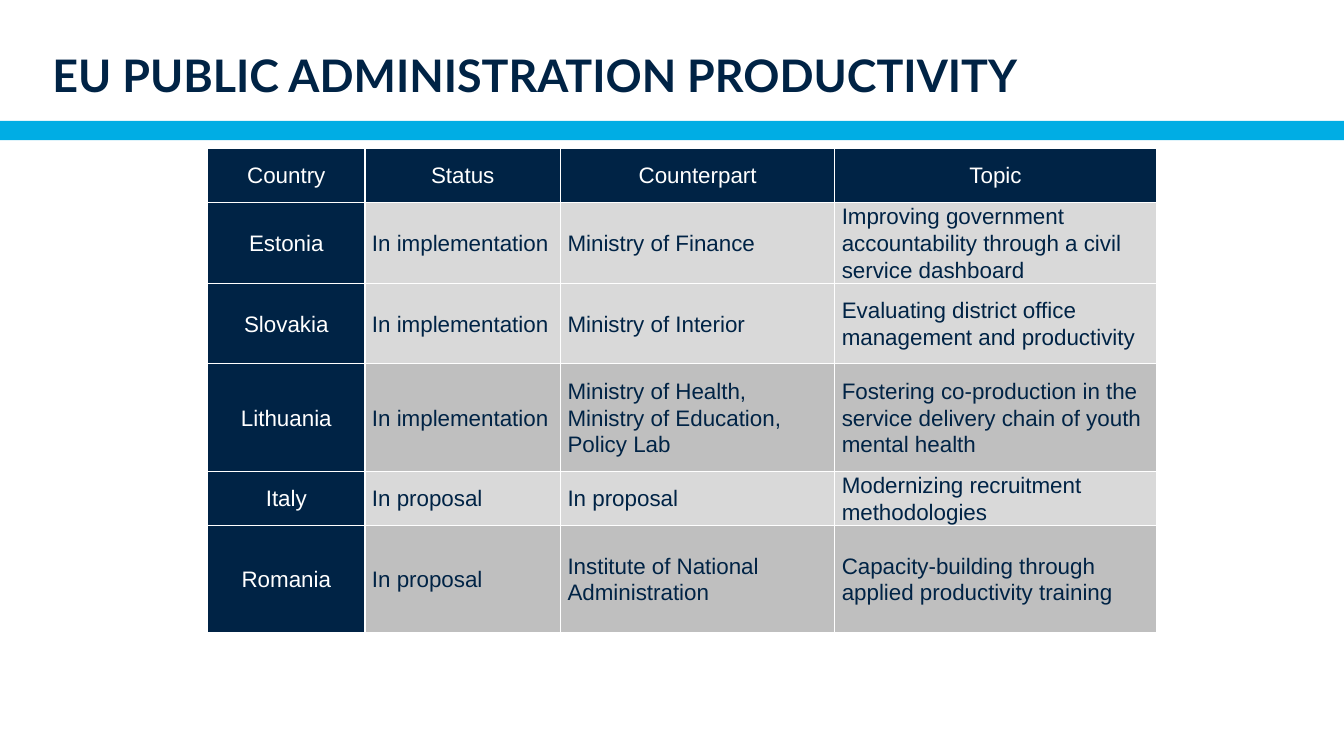
import pptx
import pptx.util
import pptx.dml.color
import pptx.enum.shapes
import pptx.enum.text
import pptx.oxml
import pptx.oxml.ns

Inches = pptx.util.Inches
Pt = pptx.util.Pt
ALIGN = pptx.enum.text.PP_ALIGN
MIDDLE = pptx.enum.text.MSO_ANCHOR.MIDDLE

COLORS = {
    "navy": "002345",
    "cyan": "00ADE4",
    "white": "FFFFFF",
    "light": "D9D9D9",
    "mid": "BFBFBF",
}
COL_WIDTHS = [1.56, 1.94, 2.72, 3.19]
ROW_HEIGHTS = [0.54, 0.8, 0.8, 1.07, 0.53, 1.07]
ROW_FILLS = ["navy", "light", "light", "mid", "light", "mid"]
ROWS = [
    ["Country", "Status", "Counterpart", "Topic"],
    ["Estonia", "In implementation", "Ministry of Finance",
     "Improving government accountability through a civil service dashboard"],
    ["Slovakia", "In implementation", "Ministry of Interior",
     "Evaluating district office management and productivity"],
    ["Lithuania", "In implementation",
     "Ministry of Health, Ministry of Education, Policy Lab",
     "Fostering co-production in the service delivery chain of youth mental health"],
    ["Italy", "In proposal", "In proposal",
     "Modernizing recruitment methodologies"],
    ["Romania", "In proposal", "Institute of National Administration",
     "Capacity-building through applied productivity training"],
]


def rgb(name):
    return pptx.dml.color.RGBColor.from_string(COLORS[name])


def set_font(p, name, size, color, bold=False):
    p.font.name = name
    p.font.size = Pt(size)
    p.font.bold = bold
    p.font.color.rgb = rgb(color)


def add_band(s):
    sp = s.shapes.add_shape(pptx.enum.shapes.MSO_SHAPE.RECTANGLE,
                            0, Inches(1.2), Inches(13.33), Inches(0.19))
    sp.shadow.inherit = False
    sp.fill.solid()
    sp.fill.fore_color.rgb = rgb("cyan")
    sp.line.fill.background()


def set_title(s, text):
    sp = s.shapes.title
    sp.left, sp.top = Inches(0.52), Inches(0.33)
    sp.width, sp.height = Inches(12.34), Inches(0.83)
    tf = sp.text_frame
    tf.margin_left = tf.margin_right = tf.margin_top = tf.margin_bottom = 0
    tf.vertical_anchor = MIDDLE
    tf.word_wrap = True
    p = tf.paragraphs[0]
    p.text = text
    p.alignment = ALIGN.LEFT
    set_font(p, "Lato", 32, "navy", True)


def set_borders(cell):
    tc_pr = cell._tc.get_or_add_tcPr()
    for i, side in enumerate("LRTB"):
        tc_pr.insert(i, pptx.oxml.parse_xml(
            f'<a:ln{side} {pptx.oxml.ns.nsdecls("a")} w="{Pt(1)}"><a:solidFill>'
            f'<a:srgbClr val="{COLORS["white"]}"/></a:solidFill></a:ln{side}>'))


def fill_cell(cell, text, fill, is_header):
    cell.margin_left = cell.margin_right = Inches(0.07)
    cell.margin_top = cell.margin_bottom = 0
    cell.vertical_anchor = MIDDLE
    cell.fill.solid()
    cell.fill.fore_color.rgb = rgb(fill)
    set_borders(cell)
    p = cell.text_frame.paragraphs[0]
    p.text = text
    p.alignment = ALIGN.CENTER if is_header else ALIGN.LEFT
    p.line_spacing = 1.07
    set_font(p, "Arial", 16, "white" if is_header else "navy")


def add_country_table(s):
    table = s.shapes.add_table(
        len(ROWS), len(COL_WIDTHS), Inches(2.06), Inches(1.47),
        Inches(sum(COL_WIDTHS)), Inches(sum(ROW_HEIGHTS))).table
    table.horz_banding = False
    for col, width in zip(table.columns, COL_WIDTHS):
        col.width = Inches(width)
    for i, (row, height) in enumerate(zip(table.rows, ROW_HEIGHTS)):
        row.height = Inches(height)
        for j, text in enumerate(ROWS[i]):
            is_header = i == 0 or j == 0
            fill = "navy" if is_header else ROW_FILLS[i]
            fill_cell(table.cell(i, j), text, fill, is_header)


def main():
    prs = pptx.Presentation()
    prs.slide_width = Inches(13.33)
    prs.slide_height = Inches(7.5)
    s = prs.slides.add_slide(prs.slide_layouts[5])
    set_title(s, "EU PUBLIC ADMINISTRATION PRODUCTIVITY")
    add_band(s)
    add_country_table(s)
    prs.save("out.pptx")


if __name__ == "__main__":
    main()
